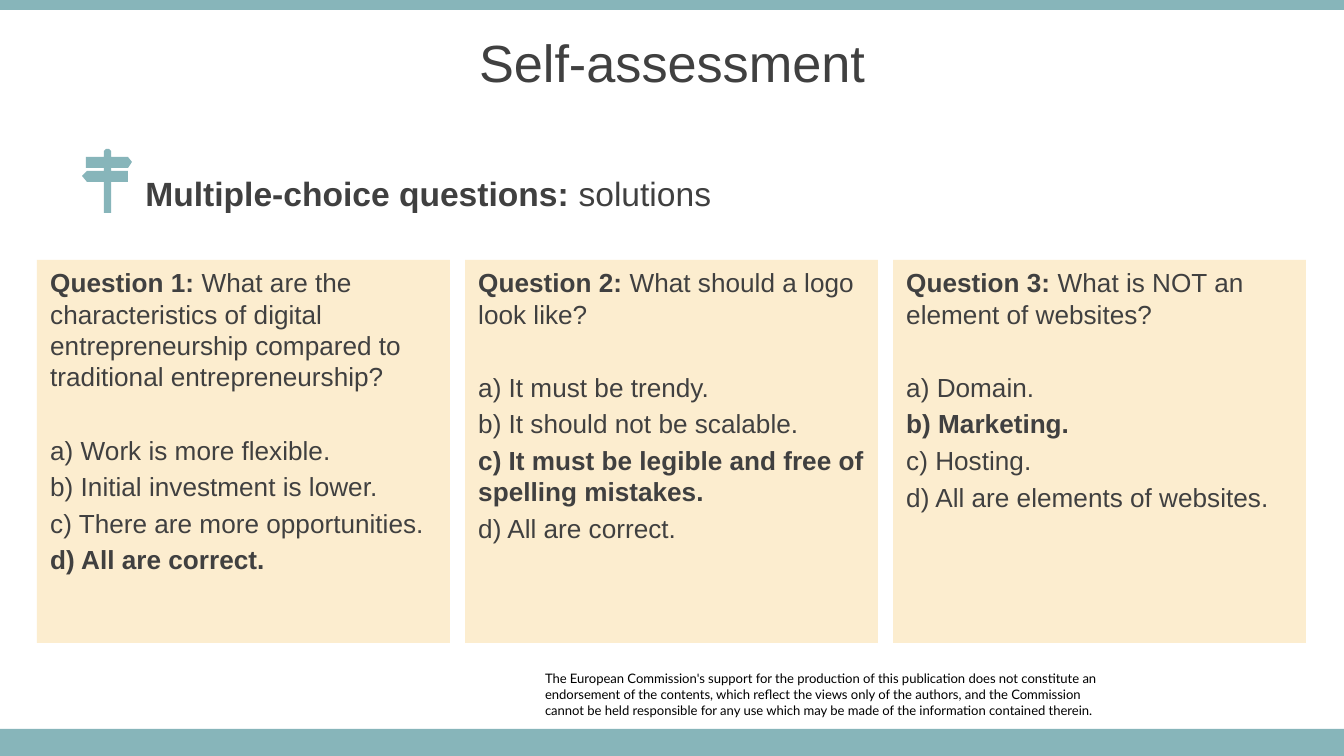
import math

import pptx
import pptx.dml.color
import pptx.enum.shapes
import pptx.enum.text
import pptx.oxml
import pptx.oxml.ns
import pptx.util

EMU_PER_PX = 914400 / 134.4
TEAL, CREAM, INK, BLACK = "87B5BA", "FCEDCF", "404040", "000000"
ALIGN = pptx.enum.text.PP_ALIGN
ANCHOR = pptx.enum.text.MSO_ANCHOR

CARD_LEFT, CARD_TOP, CARD_WIDTH, CARD_HEIGHT = 37, 260, 413, 383
CARD_PITCH = 428
QUESTIONS = [
    ("What are the characteristics of digital entrepreneurship compared to "
     "traditional entrepreneurship?",
     ["Work is more flexible.", "Initial investment is lower.",
      "There are more opportunities.", "All are correct."], "d"),
    ("What should a logo look like?",
     ["It must be trendy.", "It should not be scalable.",
      "It must be legible and free of spelling mistakes.", "All are correct."], "c"),
    ("What is NOT an element of websites?",
     ["Domain.", "Marketing.", "Hosting.", "All are elements of websites."], "b"),
]
DISCLAIMER = [
    "The European Commission's support for the production of this publication does not "
    "constitute an endorsement of the contents, which reflect the views only of the "
    "authors, and the Commission",
    "cannot be held responsible for any use which may be made of the information "
    "contained therein.",
]


def px(length):
    return pptx.util.Emu(round(length * EMU_PER_PX))


def color(code):
    return pptx.dml.color.RGBColor.from_string(code)


def paint(shape, code):
    shape.shadow.inherit = False
    shape.fill.solid()
    shape.fill.fore_color.rgb = color(code)
    shape.line.fill.background()


def add_block(page, left, top, width, height, code):
    kind = pptx.enum.shapes.MSO_SHAPE.RECTANGLE
    block = page.shapes.add_shape(kind, px(left), px(top), px(width), px(height))
    paint(block, code)
    return block


def add_span(para, text, size, bold=False, font="Arial", code=INK):
    span = para.add_run()
    span.text = text
    span.font.name = font
    span.font.size = pptx.util.Pt(size)
    span.font.bold = bold
    span.font.color.rgb = color(code)


def start_para(frame, first, before=0, align=ALIGN.LEFT):
    para = frame.paragraphs[0] if first else frame.add_paragraph()
    para.alignment = align
    para.space_before = pptx.util.Pt(before)
    return para


def fill_placeholder(box, left, top, width, height, spans, size, align):
    box.left, box.top, box.width, box.height = map(px, (left, top, width, height))
    frame = box.text_frame
    frame.word_wrap = True
    frame.auto_size = pptx.enum.text.MSO_AUTO_SIZE.NONE
    frame.vertical_anchor = ANCHOR.MIDDLE
    frame.margin_top = frame.margin_bottom = 0
    para = start_para(frame, True, align=align)
    properties = para._p.get_or_add_pPr()
    properties.set("marL", "0")
    properties.set("indent", "0")
    properties.append(pptx.oxml.parse_xml(
        "<a:buNone %s/>" % pptx.oxml.ns.nsdecls("a")))
    for text, bold in spans:
        add_span(para, text, size, bold)


def add_signpost(page):
    cap = [(107.5 + 3.5 * math.cos(angle), 152.5 - 3.5 * math.sin(angle))
           for angle in (math.pi * step / 12 for step in range(13))]
    left_side = [(104, 157), (86, 157), (86, 168), (104, 168), (104, 171),
                 (87, 171), (82, 176), (87, 182), (104, 182), (104, 213)]
    right_side = [(111, 213), (111, 182), (128, 182), (128, 171), (111, 171),
                  (111, 168), (128, 168), (132, 162), (128, 157), (111, 157)]
    builder = page.shapes.build_freeform(*cap[0], scale=EMU_PER_PX)
    builder.add_line_segments(cap[1:] + left_side + right_side, close=True)
    paint(builder.convert_to_shape(), TEAL)


def add_card(page, index, question, answers, correct):
    card = add_block(page, CARD_LEFT + index * CARD_PITCH, CARD_TOP,
                     CARD_WIDTH, CARD_HEIGHT, CREAM)
    frame = card.text_frame
    frame.word_wrap = True
    frame.vertical_anchor = ANCHOR.TOP
    para = start_para(frame, True)
    add_span(para, f"Question {index + 1}: ", 14, True)
    add_span(para, question, 14)
    for letter, answer in zip("abcd", answers):
        para = start_para(frame, False, 22.4 if letter == "a" else 2.8)
        add_span(para, f"{letter}) {answer}", 14, letter == correct)


def add_disclaimer(page):
    box = page.shapes.add_textbox(px(545), px(671), px(560), px(47))
    frame = box.text_frame
    frame.word_wrap = True
    frame.margin_left = frame.margin_right = frame.margin_top = frame.margin_bottom = 0
    for number, text in enumerate(DISCLAIMER):
        add_span(start_para(frame, number == 0), text, 7, font="Lato", code=BLACK)


def main():
    deck = pptx.Presentation()
    deck.slide_width, deck.slide_height = px(1344), px(756)
    page = deck.slides.add_slide(deck.slide_layouts[1])
    add_disclaimer(page)
    add_block(page, 0, 729, 1344, 27, TEAL)
    add_block(page, 0, 0, 1344, 10, TEAL)
    fill_placeholder(page.shapes.title, 0, 19, 1344, 85,
                     [("Self-assessment", False)], 28, ALIGN.CENTER)
    fill_placeholder(page.placeholders[1], 132, 172, 899, 42,
                     [("Multiple-choice questions: ", True), ("solutions", False)],
                     18, ALIGN.LEFT)
    add_signpost(page)
    for index, (question, answers, correct) in enumerate(QUESTIONS):
        add_card(page, index, question, answers, correct)
    deck.save("out.pptx")


if __name__ == "__main__":
    main()
